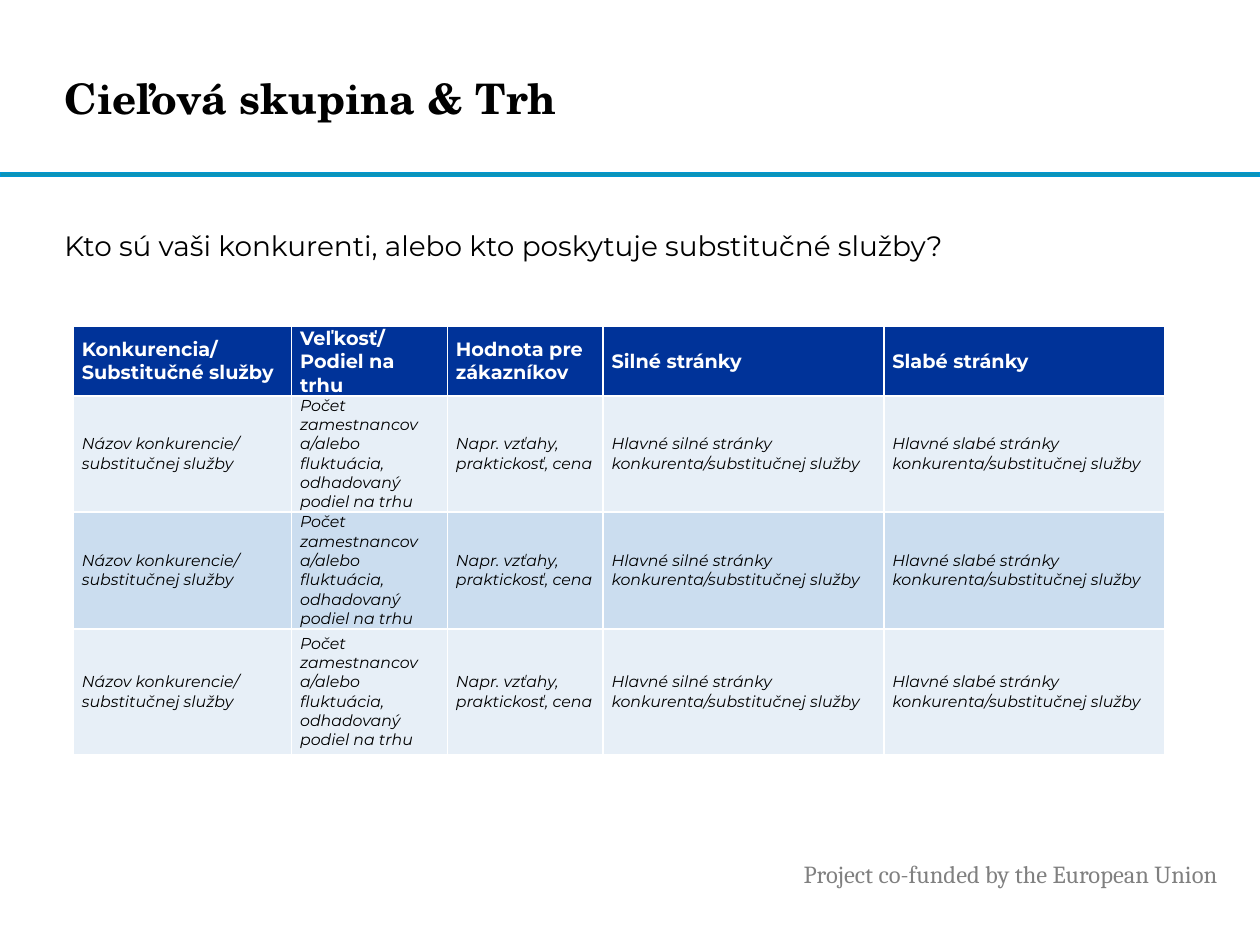
from dataclasses import dataclass

from lxml.etree import SubElement
from pptx import Presentation
from pptx.dml.color import RGBColor as RGB
from pptx.enum.shapes import MSO_SHAPE as Shape
from pptx.enum.text import MSO_ANCHOR as Anchor, MSO_AUTO_SIZE as AutoSize, PP_ALIGN as Align
from pptx.oxml.ns import qn
from pptx.util import Cm, Pt


@dataclass(frozen=True)
class Theme:
    """Colours, fonts and type sizes of the slide."""
    black: RGB = RGB(0, 0, 0)
    white: RGB = RGB(255, 255, 255)
    grey: RGB = RGB(0x80, 0x80, 0x80)
    rule: RGB = RGB(0x0C, 0x94, 0xB7)
    rule_edge: RGB = RGB(0x00, 0x96, 0xD3)
    header: RGB = RGB(0x00, 0x33, 0x99)
    bands: tuple = (RGB(0xE7, 0xEF, 0xF7), RGB(0xCB, 0xDD, 0xEF))
    title_font: str = "TeX Gyre Schola"
    body_font: str = "Montserrat"
    footer_font: str = "Cambria"
    title_size: int = 24
    body_size: int = 16
    footer_size: int = 14
    header_size: int = 11
    cell_size: int = 9


T = Theme()
HEADINGS = ["Konkurencia/\nSubstitučné služby", "Veľkosť/\nPodiel na trhu",
            "Hodnota pre zákazníkov", "Silné stránky", "Slabé stránky"]
COMPETITOR = ["Názov konkurencie/\vsubstitučnej služby",
              "Počet zamestnancov a/alebo fluktuácia, odhadovaný podiel na trhu",
              "Napr. vzťahy, praktickosť, cena",
              "Hlavné silné stránky konkurenta/substitučnej služby",
              "Hlavné slabé stránky konkurenta/substitučnej služby"]
COL_WIDTHS = [4.4, 3.14, 3.14, 5.66, 5.66]
ROW_HEIGHTS = [1.25, 2.34, 2.36, 2.54]


def style(tf, name, size, color, bold=False, italic=False):
    """Format every paragraph of a text frame alike."""
    for p in tf.paragraphs:
        p.alignment = Align.LEFT
        f = p.font
        f.name, f.size, f.bold, f.italic = name, Pt(size), bold, italic
        f.color.rgb = color


def set_margins(tf, x, y):
    """Set equal side margins and equal top and bottom margins."""
    tf.margin_left = tf.margin_right = Cm(x)
    tf.margin_top = tf.margin_bottom = Cm(y)


def add_title(s, text, left, top, width, height):
    """Place the title in its placeholder."""
    sp = s.shapes.title
    sp.left, sp.top, sp.width, sp.height = Cm(left), Cm(top), Cm(width), Cm(height)
    tf = sp.text_frame
    tf.text, tf.word_wrap = text, True
    tf.auto_size, tf.vertical_anchor = AutoSize.NONE, Anchor.MIDDLE
    set_margins(tf, 0, 0)
    style(tf, T.title_font, T.title_size, T.black, bold=True)


def add_rule(s, left, top, width, height):
    """Draw the band below the title."""
    sp = s.shapes.add_shape(Shape.RECTANGLE, Cm(left), Cm(top), Cm(width), Cm(height))
    sp.shadow.inherit = False
    sp.fill.solid()
    sp.fill.fore_color.rgb = T.rule
    sp.line.color.rgb, sp.line.width = T.rule_edge, Pt(1)


def add_text(s, text, left, top, width, height):
    """Add a wrapped text box and return its frame."""
    tf = s.shapes.add_textbox(Cm(left), Cm(top), Cm(width), Cm(height)).text_frame
    tf.text, tf.word_wrap = text, True
    return tf


def add_question(s, text, left, top, width, height):
    """Write the lead question."""
    tf = add_text(s, text, left, top, width, height)
    set_margins(tf, 0, 0.13)
    style(tf, T.body_font, T.body_size, T.black)
    tf.paragraphs[0].space_after = Pt(6)


def add_footer(s, text, left, top, width, height):
    """Write the funding note."""
    tf = add_text(s, text, left, top, width, height)
    tf.auto_size = AutoSize.SHAPE_TO_FIT_TEXT
    style(tf, T.footer_font, T.footer_size, T.grey)


def add_borders(cell, color):
    """Give a cell thin borders on all sides."""
    tc_pr = cell._tc.get_or_add_tcPr()
    for side in ("a:lnL", "a:lnR", "a:lnT", "a:lnB"):
        ln = SubElement(tc_pr, qn(side), w=str(Pt(1)))
        fill = SubElement(ln, qn("a:solidFill"))
        SubElement(fill, qn("a:srgbClr"), val=str(color))


def fill_cell(cell, text, is_header, fill):
    """Write and format one table cell."""
    cell.text = text
    cell.vertical_anchor = Anchor.MIDDLE
    set_margins(cell, 0.17, 0)
    add_borders(cell, T.white)
    cell.fill.solid()
    cell.fill.fore_color.rgb = fill
    size, color = (T.header_size, T.white) if is_header else (T.cell_size, T.black)
    style(cell.text_frame, T.body_font, size, color, bold=is_header, italic=not is_header)


def add_competitors(s, rows, left, top):
    """Build the table of competitors."""
    table = s.shapes.add_table(len(rows), len(COL_WIDTHS), Cm(left), Cm(top),
                               Cm(sum(COL_WIDTHS)), Cm(sum(ROW_HEIGHTS))).table
    for col, width in zip(table.columns, COL_WIDTHS):
        col.width = Cm(width)
    for i, (row, height, texts) in enumerate(zip(table.rows, ROW_HEIGHTS, rows)):
        row.height = Cm(height)
        fill = T.bands[(i - 1) % 2] if i else T.header
        for cell, text in zip(row.cells, texts):
            fill_cell(cell, text, i == 0, fill)


def main():
    """Build and save the slide."""
    prs = Presentation()
    prs.slide_width, prs.slide_height = Cm(25.4), Cm(19.05)
    s = prs.slides.add_slide(prs.slide_layouts[5])
    add_rule(s, 0, 3.48, 25.4, 0.08)
    add_footer(s, "Project co-funded by the European Union", 15.95, 17.2, 9.3, 0.86)
    add_question(s, "Kto sú vaši konkurenti, alebo kto poskytuje substitučné služby?",
                 1.3, 4.47, 21.56, 12.85)
    add_title(s, "Cieľová skupina & Trh", 1.3, 0.46, 18.47, 3.02)
    add_competitors(s, [HEADINGS] + [COMPETITOR] * 3, 1.48, 6.58)
    prs.save("out.pptx")


if __name__ == "__main__":
    main()
